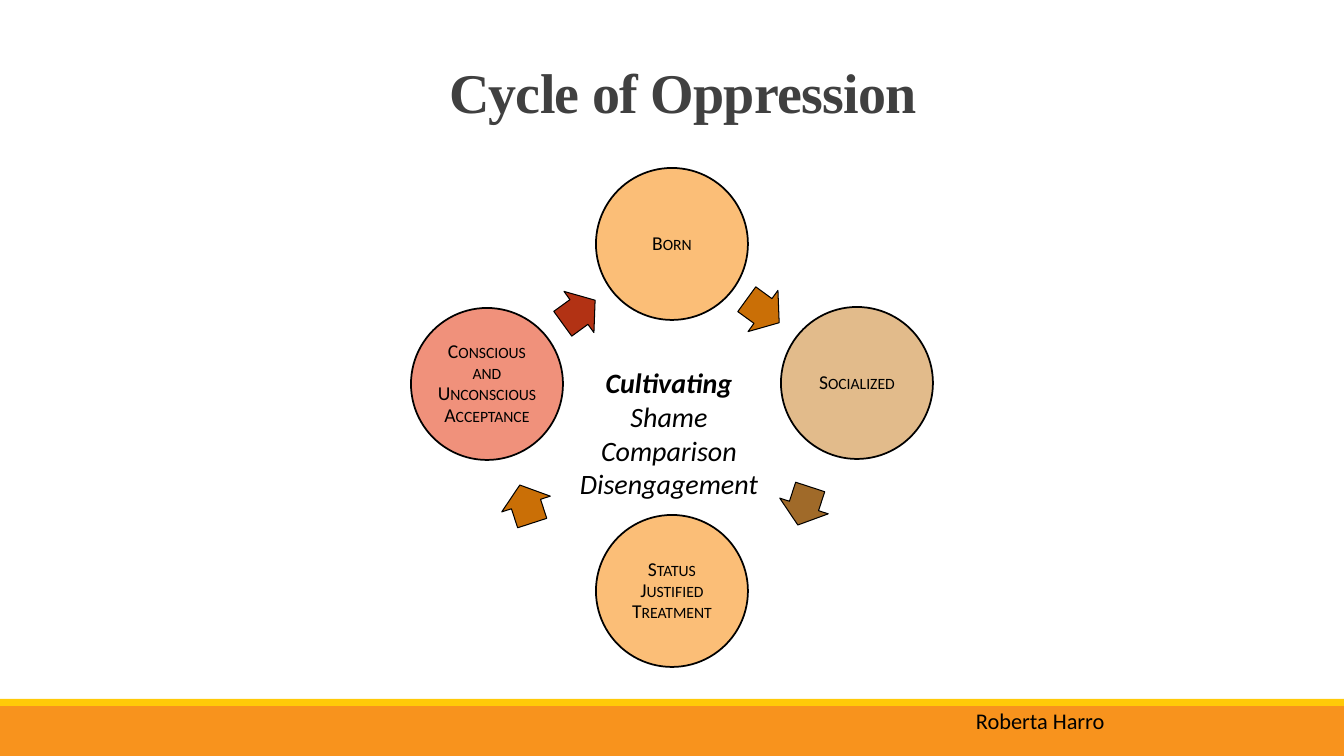
from pptx import Presentation
from pptx import util as u
from pptx.dml.color import RGBColor
from pptx.enum import shapes, text

PX = 914400 / 100.8
SLIDE = (1344, 756)
CIRCLE = 152
ARROW = (40, 51)

TITLE = "Cycle of Oppression"
AUTHOR = "Roberta Harro"
CULTIVATING = ["Cultivating", "Shame", "Comparison", "Disengagement"]
BARS = [(706, 50, "F8931D"), (699, 7, "FFCA08")]  # top, height, fill
STAGES = [  # left, top, fill, label
    (596, 168, "FBBE77", "Born"),
    (781, 307, "E2BB8B", "Socialized"),
    (596, 515, "FBBE77", "Status Justified Treatment"),
    (411, 308, "F0917B", "Conscious and Unconscious Acceptance"),
]
ARROWS = [  # centre x, centre y, rotation, fill
    (763, 311, 36, "CA6F06"),
    (804, 506, 108, "A06A29"),
    (526, 504, 252, "CA6F06"),
    (579, 312, 324, "B23214"),
]


def px(*lengths):
    return [u.Emu(round(length * PX)) for length in lengths]


def color(code):
    return RGBColor.from_string(code)


def add_shape(kind, box, fill, line_width=0):
    shape = page.shapes.add_shape(kind, *px(*box))
    shape.shadow.inherit = False
    shape.fill.solid()
    shape.fill.fore_color.rgb = color(fill)
    if line_width:
        shape.line.color.rgb = color("000000")
        shape.line.width = u.Pt(line_width)
    else:
        shape.line.fill.background()
    return shape


def add_span(para, words, size, font="Calibri", code="000000", bold=False, italic=False):
    span = para.add_run()
    span.text = words
    span.font.name = font
    span.font.size = u.Pt(size)
    span.font.color.rgb = color(code)
    span.font.bold = bold
    span.font.italic = italic
    return span


def add_text_box(box):
    frame = page.shapes.add_textbox(*px(*box)).text_frame
    frame.word_wrap = True
    return frame


deck = Presentation()
deck.slide_width, deck.slide_height = px(*SLIDE)
page = deck.slides.add_slide(deck.slide_layouts[5])

for top, height, fill in BARS:
    add_shape(shapes.MSO_SHAPE.RECTANGLE, (0, top, SLIDE[0], height), fill)

title = page.shapes.title
title.left, title.top, title.width, title.height = px(301, 40, 764, 90)
title.text_frame.vertical_anchor = text.MSO_ANCHOR.BOTTOM
title.text_frame.auto_size = text.MSO_AUTO_SIZE.NONE
para = title.text_frame.paragraphs[0]
para.alignment = text.PP_ALIGN.CENTER
para.line_spacing = 0.85
span = add_span(para, TITLE, 40, "Times New Roman", "404040", bold=True)
span.font._element.set("spc", "-50")

add_span(add_text_box((966, 702, 168, 38)).paragraphs[0], AUTHOR, 16)

for left, top, fill, label in STAGES:
    circle = add_shape(shapes.MSO_SHAPE.OVAL, (left, top, CIRCLE, CIRCLE), fill, 1.25)
    frame = circle.text_frame
    frame.word_wrap = True
    frame.vertical_anchor = text.MSO_ANCHOR.MIDDLE
    frame.margin_left, frame.margin_top, frame.margin_right, frame.margin_bottom = px(2, 2, 2, 2)
    para = frame.paragraphs[0]
    para.alignment = text.PP_ALIGN.CENTER
    para.line_spacing = 0.9
    add_span(para, label, 14).font._element.set("cap", "small")

for x, y, rotation, fill in ARROWS:
    width, height = ARROW
    box = (x - width / 2, y - height / 2, width, height)
    arrow = add_shape(shapes.MSO_SHAPE.RIGHT_ARROW, box, fill, 0.75)
    arrow.rotation = rotation
    arrow.adjustments[0] = 0.6
    arrow.adjustments[1] = 0.5

frame = add_text_box((547, 361, 244, 173))
for number, words in enumerate(CULTIVATING):
    para = frame.add_paragraph() if number else frame.paragraphs[0]
    para.alignment = text.PP_ALIGN.CENTER
    add_span(para, words, 20, bold=number == 0, italic=True)

deck.save("out.pptx")
